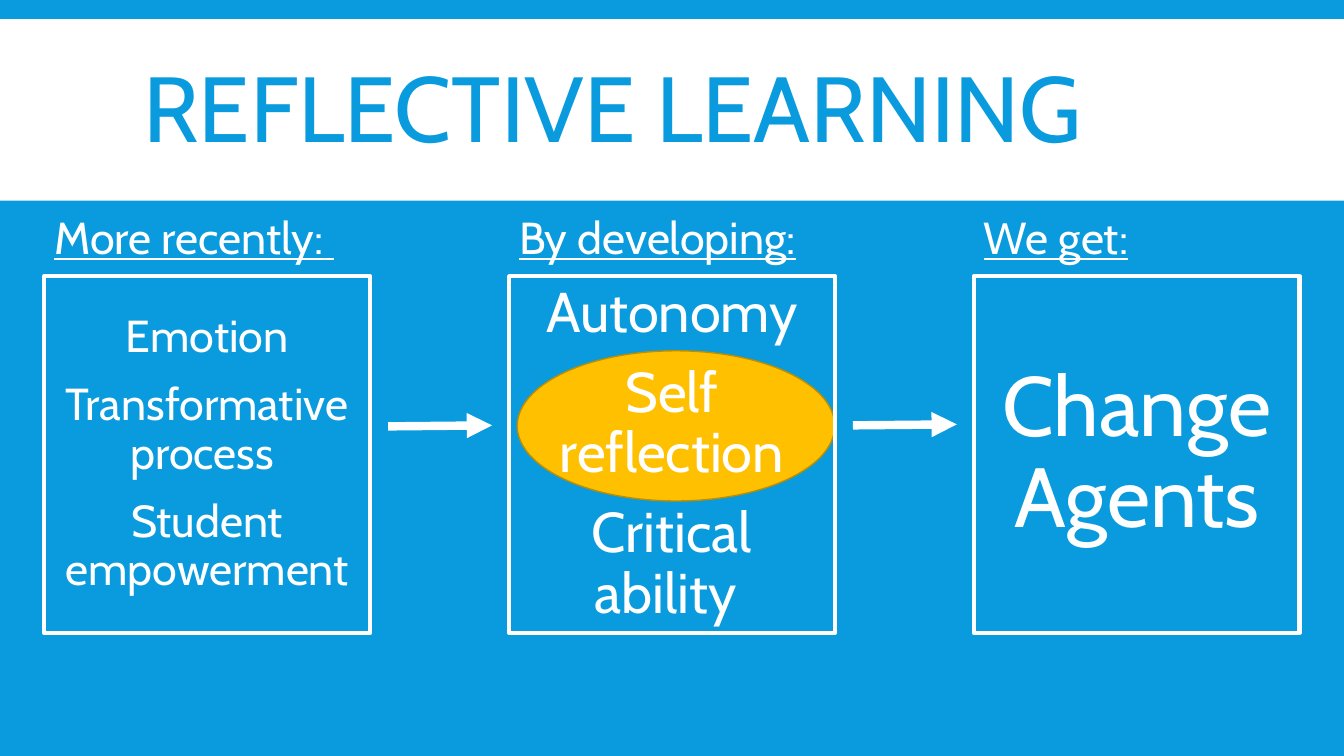
from lxml.etree import SubElement
from pptx import Presentation
from pptx.dml.color import RGBColor
from pptx.enum.shapes import MSO_CONNECTOR, MSO_SHAPE
from pptx.enum.text import MSO_ANCHOR, MSO_AUTO_SIZE, PP_ALIGN
from pptx.oxml.ns import qn
from pptx.util import Inches, Pt

FONT = "Cabin"
COLORS = {
    "blue": "099BDD",
    "white": "FFFFFF",
    "amber": "FFC000",
    "amber_edge": "BD8E00",
}

# Three columns: heading, heading width, entries, entry size
COLUMNS = [
    ("More recently: ", 2.99,
     ["Emotion", "Transformative process ", "Student empowerment"], 32),
    ("By developing:", 3.03,
     ["Autonomy", "Self reflection", "Critical ability "], 40),
    ("We get:", 1.72, ["Change Agents"], 60),
]
COLUMN_LEFT, COLUMN_PITCH = 0.44, 4.61
BOX_TOP, BOX_WIDTH, BOX_HEIGHT = 2.74, 3.23, 3.54


def color(name):
    return RGBColor.from_string(COLORS[name])


def place(element, left, top, width, height):
    element.left, element.top = Inches(left), Inches(top)
    element.width, element.height = Inches(width), Inches(height)


def set_font(paragraph, size, color_name):
    paragraph.font.name = FONT
    paragraph.font.size = Pt(size)
    paragraph.font.color.rgb = color(color_name)


def set_line(line, color_name, width):
    line.color.rgb = color(color_name)
    line.width = Pt(width)


def add_filled(slide, preset, bounds, fill_name):
    filled = slide.shapes.add_shape(preset, *map(Inches, bounds))
    filled.shadow.inherit = False
    filled.fill.solid()
    filled.fill.fore_color.rgb = color(fill_name)
    return filled


def write_title(title):
    place(title, 1.32, 0.31, 10.7, 1.65)
    frame = title.text_frame
    frame.text = "REFLECTIVE LEARNING"
    frame.auto_size = MSO_AUTO_SIZE.NONE
    frame.vertical_anchor = MSO_ANCHOR.MIDDLE
    paragraph = frame.paragraphs[0]
    paragraph.alignment = PP_ALIGN.LEFT
    paragraph.line_spacing = 0.85
    set_font(paragraph, 66, "blue")


def fill_box(box, left, entries, size):
    place(box, left, BOX_TOP, BOX_WIDTH, BOX_HEIGHT)
    box.fill.background()
    set_line(box.line, "white", 3)
    frame = box.text_frame
    frame.text = "\n".join(entries)
    frame.word_wrap = True
    frame.auto_size = MSO_AUTO_SIZE.NONE
    frame.vertical_anchor = MSO_ANCHOR.MIDDLE
    for paragraph in frame.paragraphs:
        paragraph.alignment = PP_ALIGN.CENTER
        paragraph.line_spacing = 0.9
        paragraph.space_before, paragraph.space_after = Pt(12), Pt(2)
        set_font(paragraph, size, "white")
        # No bullet and no hanging indent
        properties = paragraph._p.get_or_add_pPr()
        properties.set("marL", "0")
        properties.set("indent", "0")
        SubElement(properties, qn("a:buNone"))


def add_box(slide):
    box = slide.shapes.add_shape(MSO_SHAPE.RECTANGLE, 0, 0, 0, 0)
    box.shadow.inherit = False
    return box


def add_heading(slide, left, width, text):
    heading = slide.shapes.add_textbox(
        Inches(left), Inches(2.03), Inches(width), Inches(0.64))
    frame = heading.text_frame
    frame.text = text
    frame.word_wrap = False
    frame.auto_size = MSO_AUTO_SIZE.SHAPE_TO_FIT_TEXT
    set_font(frame.paragraphs[0], 32, "white")
    frame.paragraphs[0].font.underline = True


def add_arrow(slide, left, top):
    arrow = slide.shapes.add_connector(
        MSO_CONNECTOR.STRAIGHT, Inches(left), Inches(top),
        Inches(left + 1.03), Inches(top - 0.01))
    set_line(arrow.line, "white", 6)
    SubElement(arrow.line._get_or_add_ln(), qn("a:tailEnd"), type="triangle")
    SubElement(arrow._element.spPr, qn("a:effectLst"))


def main():
    presentation = Presentation()
    presentation.slide_width = Inches(13.33)
    presentation.slide_height = Inches(7.5)
    slide = presentation.slides.add_slide(presentation.slide_layouts[1])
    slide.background.fill.solid()
    slide.background.fill.fore_color.rgb = color("blue")

    # Title on a white band, which goes to the back
    band = add_filled(slide, MSO_SHAPE.RECTANGLE, (0, 0.19, 13.33, 1.8), "white")
    band.line.fill.background()
    slide.shapes._spTree.insert(2, band._element)
    write_title(slide.shapes.title)

    # Highlight behind the middle column
    highlight = add_filled(
        slide, MSO_SHAPE.OVAL, (5.13, 3.48, 3.15, 1.49), "amber")
    set_line(highlight.line, "amber_edge", 1)

    # Columns, joined by arrows
    for index, (heading, width, entries, size) in enumerate(COLUMNS):
        left = COLUMN_LEFT + index * COLUMN_PITCH
        box = slide.placeholders[1] if index == 0 else add_box(slide)
        fill_box(box, left, entries, size)
        add_heading(slide, left, width, heading)
        if index < len(COLUMNS) - 1:
            add_arrow(slide, left + 3.41, 4.23 - 0.01 * index)

    presentation.save("out.pptx")


if __name__ == "__main__":
    main()
